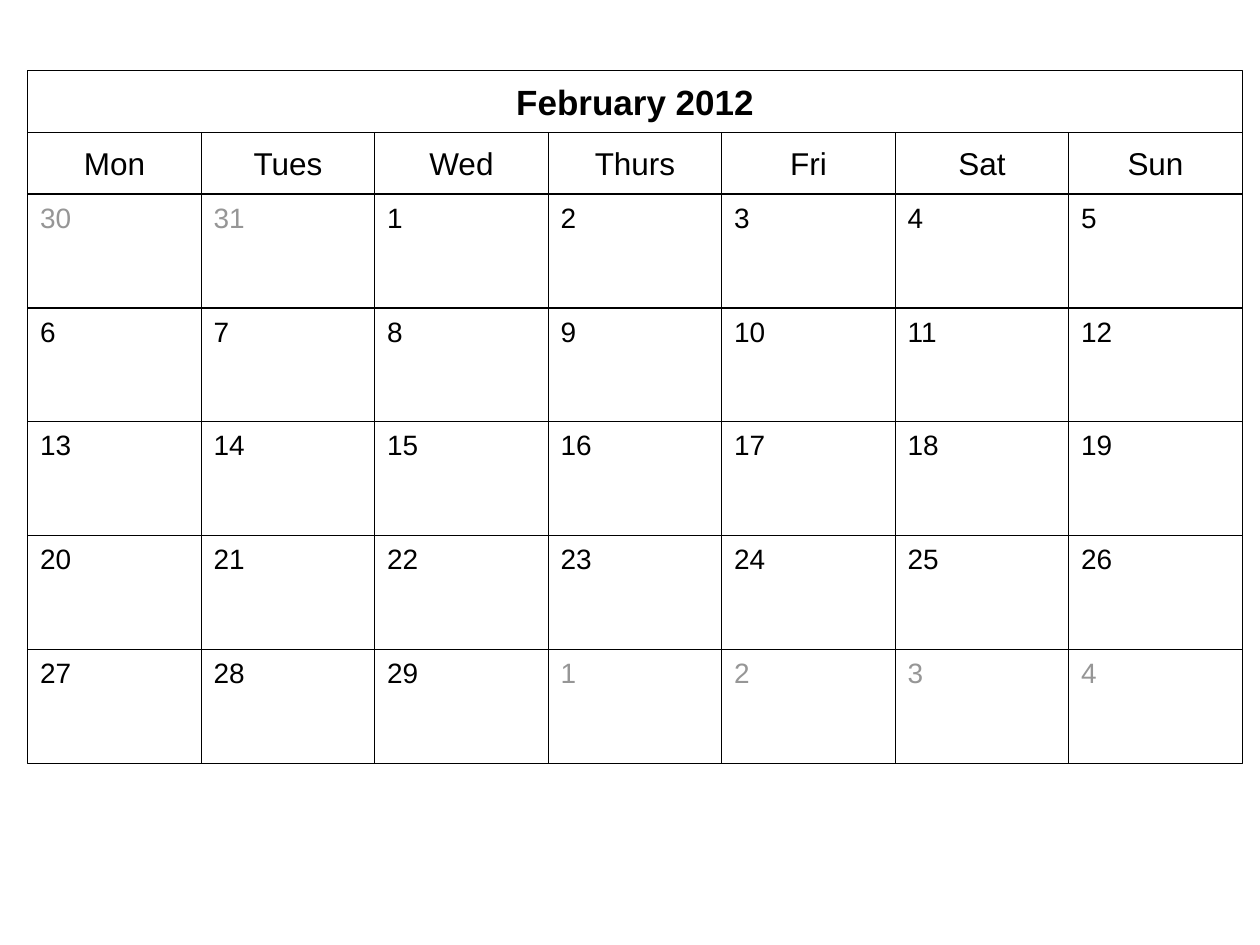
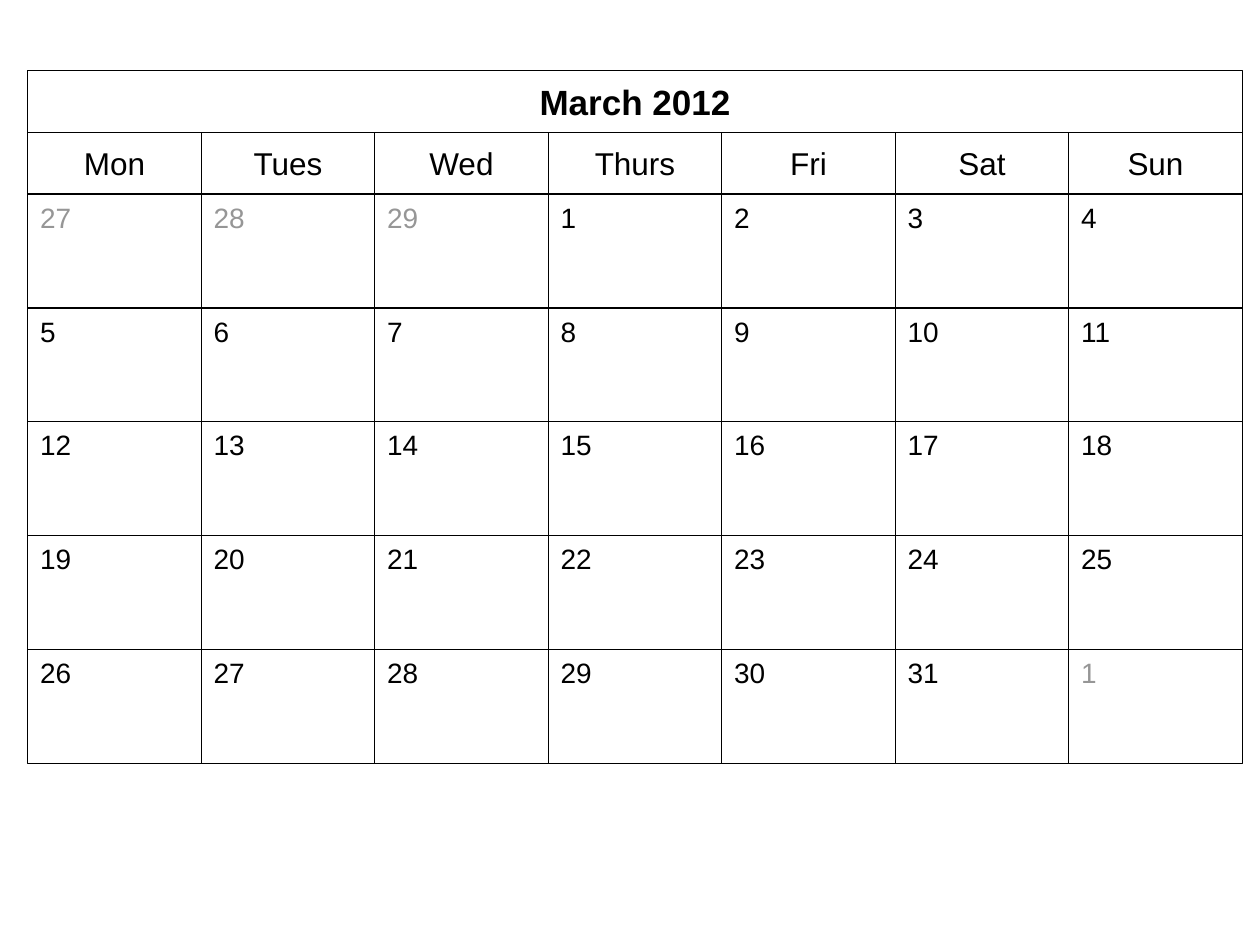
from dataclasses import dataclass
from typing import Iterator

from pptx import Presentation
from pptx.dml.color import RGBColor
from pptx.enum.shapes import MSO_SHAPE as Preset
from pptx.enum.text import MSO_ANCHOR as Anchor, MSO_AUTO_SIZE as AutoSize, PP_ALIGN as Align
from pptx.util import Pt

PX = 9144  # EMU per px, 100 px to the inch
BLACK, GREY, WHITE = "000000", "969696", "FFFFFF"
WEEKDAYS = ["Mon", "Tues", "Wed", "Thurs", "Fri", "Sat", "Sun"]
WEEKS = 5

# Calendar grid
LEFT, TOP, WIDTH = 22, 56, 964
BAND_HEIGHT = 49
WEEKS_TOP = TOP + 2 * BAND_HEIGHT
WEEKS_HEIGHT = 452


@dataclass(frozen=True)
class Month:
    name: str
    length: int
    previous_length: int
    leading_days: int  # days of the previous month shown in the first week


@dataclass(frozen=True)
class CellStyle:
    font: dict
    frame: dict
    align: Align
    fill: str | None = None


BAND_FRAME = dict(vertical_anchor=Anchor.MIDDLE, margin_left=10 * PX, margin_right=10 * PX,
                  margin_top=2 * PX, margin_bottom=2 * PX)
DAY_FRAME = dict(vertical_anchor=Anchor.TOP, margin_left=10 * PX, margin_right=10 * PX,
                 margin_top=5 * PX, margin_bottom=5 * PX)
MONTH_STYLE = CellStyle(dict(size=Pt(20), bold=True), BAND_FRAME, Align.CENTER, WHITE)
WEEKDAY_STYLE = CellStyle(dict(size=Pt(18)), BAND_FRAME, Align.CENTER, WHITE)
DAY_STYLE = CellStyle(dict(size=Pt(16)), DAY_FRAME, Align.LEFT)

MONTHS = [
    Month("February 2012", length=29, previous_length=31, leading_days=2),
    Month("March 2012", length=31, previous_length=29, leading_days=3),
]


def colour(hex_code: str) -> RGBColor:
    return RGBColor.from_string(hex_code)


def apply(target, values: dict) -> None:
    for name, value in values.items():
        setattr(target, name, value)


def column_box(column: int, top: float, height: float) -> tuple[int, ...]:
    """Left, top, width and height in EMU of a cell in a weekday column."""
    step = WIDTH / len(WEEKDAYS)
    return tuple(round(length * PX) for length in (LEFT + step * column, top, step, height))


def format_cell(cell, text: str, style: CellStyle, ink: str = BLACK) -> None:
    # Outline and background
    if style.fill:
        cell.fill.solid()
        cell.fill.fore_color.rgb = colour(style.fill)
    else:
        cell.fill.background()
    cell.line.color.rgb = colour(BLACK)
    cell.line.width = Pt(0.75)

    # Text
    frame = cell.text_frame
    apply(frame, dict(word_wrap=True, auto_size=AutoSize.NONE) | style.frame)
    frame.text = text
    paragraph = frame.paragraphs[0]
    paragraph.alignment = style.align
    font = paragraph.runs[0].font
    apply(font, dict(name="Arial") | style.font)
    font.color.rgb = colour(ink)


def add_cell(slide, box: tuple[int, ...], text: str, style: CellStyle, ink: str = BLACK) -> None:
    cell = slide.shapes.add_shape(Preset.RECTANGLE, *box)
    cell.shadow.inherit = False
    format_cell(cell, text, style, ink)


def shown_days(month: Month) -> Iterator[tuple[int, str]]:
    """Day number and ink for every cell, with neighbouring months in grey."""
    for position in range(WEEKS * len(WEEKDAYS)):
        day = position - month.leading_days + 1
        if day < 1:
            yield day + month.previous_length, GREY
        elif day > month.length:
            yield day - month.length, GREY
        else:
            yield day, BLACK


def add_calendar(deck, month: Month) -> None:
    slide = deck.slides.add_slide(deck.slide_layouts.get_by_name("Title Only"))

    # Month band
    heading = slide.shapes.title
    apply(heading, dict(left=LEFT * PX, top=TOP * PX, width=WIDTH * PX, height=BAND_HEIGHT * PX))
    format_cell(heading, month.name, MONTH_STYLE)

    # Weekday row
    for column, weekday in enumerate(WEEKDAYS):
        add_cell(slide, column_box(column, TOP + BAND_HEIGHT, BAND_HEIGHT), weekday, WEEKDAY_STYLE)

    # Weeks
    week_height = WEEKS_HEIGHT / WEEKS
    for position, (day, ink) in enumerate(shown_days(month)):
        week, column = divmod(position, len(WEEKDAYS))
        box = column_box(column, WEEKS_TOP + week * week_height, week_height)
        add_cell(slide, box, str(day), DAY_STYLE, ink)


def main() -> None:
    deck = Presentation()
    apply(deck, dict(slide_width=1000 * PX, slide_height=750 * PX))
    for month in MONTHS:
        add_calendar(deck, month)
    deck.save("out.pptx")


if __name__ == "__main__":
    main()
